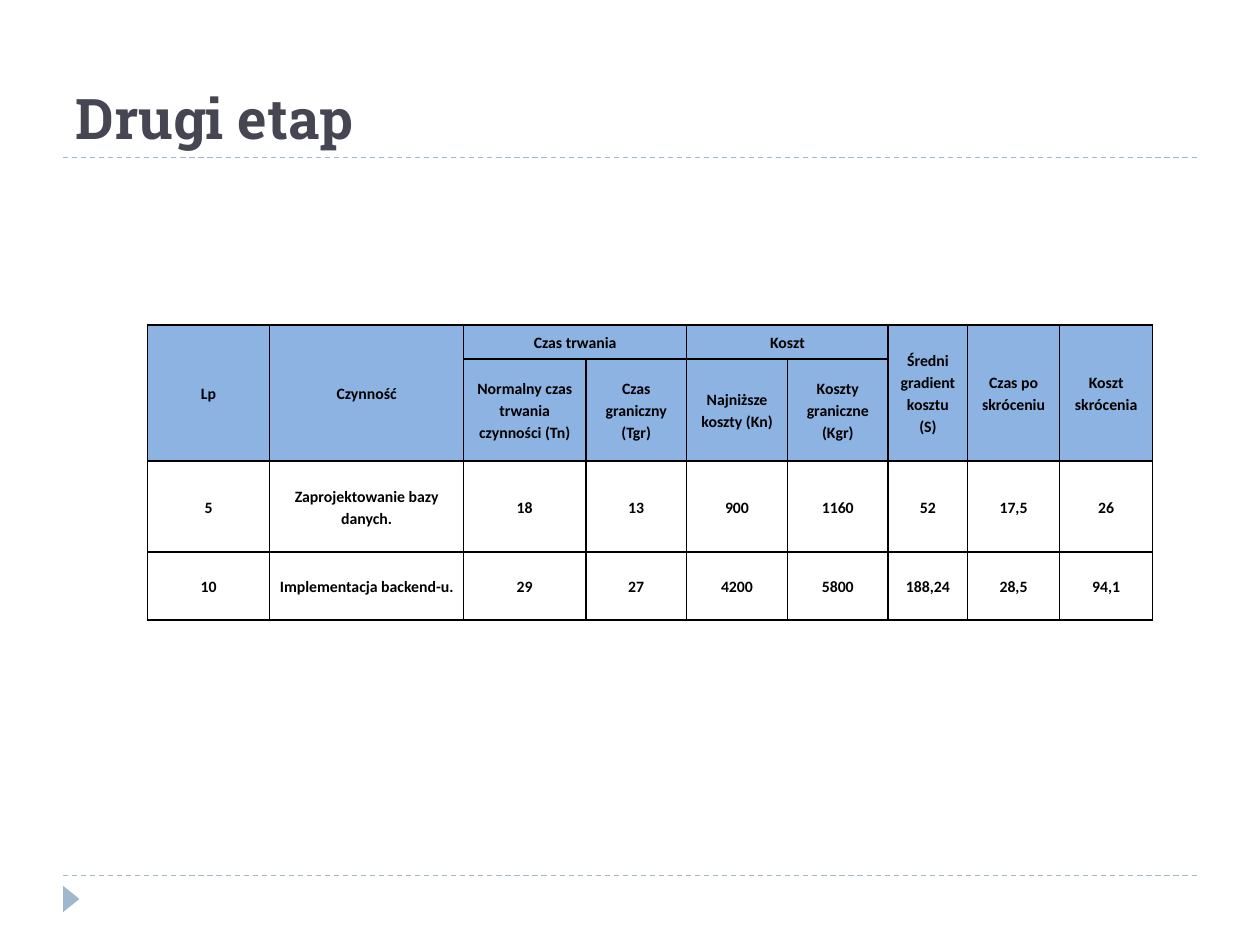
"""Build the "Drugi etap" slide with its table of shortened activities."""
from dataclasses import dataclass

import pptx
import pptx.dml.color
import pptx.enum.dml
import pptx.enum.shapes
import pptx.enum.text
import pptx.oxml
import pptx.oxml.ns
import pptx.util
from pptx.util import Inches, Pt

RGBColor = pptx.dml.color.RGBColor
ALIGN = pptx.enum.text.PP_ALIGN
ANCHOR = pptx.enum.text.MSO_ANCHOR

ACCENT = RGBColor(0x9F, 0xB8, 0xCD)
TITLE = RGBColor(0x46, 0x46, 0x53)
HEADER = RGBColor(0x8D, 0xB3, 0xE2)
BLACK = RGBColor(0, 0, 0)

COL_WIDTHS = (0.97, 1.54, 0.97, 0.8, 0.8, 0.8, 0.63, 0.73, 0.74)
ROW_HEIGHTS = (0.27, 0.81, 0.72, 0.54)
RULES = (6.95, 1.25)


@dataclass
class Header:
    text: str
    row: int
    col: int
    rows: int = 1
    cols: int = 1


HEADERS = (
    Header("Lp", 0, 0, rows=2),
    Header("Czynność", 0, 1, rows=2),
    Header("Czas trwania", 0, 2, cols=2),
    Header("Koszt", 0, 4, cols=2),
    Header("Średni gradient kosztu (S)", 0, 6, rows=2),
    Header("Czas po skróceniu", 0, 7, rows=2),
    Header("Koszt skrócenia", 0, 8, rows=2),
    Header("Normalny czas trwania czynności (Tn)", 1, 2),
    Header("Czas graniczny (Tgr)", 1, 3),
    Header("Najniższe koszty (Kn)", 1, 4),
    Header("Koszty graniczne (Kgr)", 1, 5),
)
ACTIVITIES = (
    ("5", "Zaprojektowanie bazy danych.", "18", "13", "900", "1160", "52", "17,5", "26"),
    ("10", "Implementacja backend-u.", "29", "27", "4200", "5800", "188,24", "28,5", "94,1"),
)


def add_rule(s, y: float) -> None:
    line = s.shapes.add_connector(
        pptx.enum.shapes.MSO_CONNECTOR.STRAIGHT, Inches(0.5), Inches(y), Inches(9.5), Inches(y))
    line.line.color.rgb = ACCENT
    line.line.width = Pt(0.75)
    line.line.dash_style = pptx.enum.dml.MSO_LINE.DASH
    line._element.spPr.append(pptx.oxml.parse_xml(
        f"<a:effectLst {pptx.oxml.ns.nsdecls('a')}/>"))


def add_marker(s) -> None:
    sp = s.shapes.add_shape(
        pptx.enum.shapes.MSO_SHAPE.ISOSCELES_TRIANGLE,
        Inches(0.46), Inches(7.07), Inches(0.21), Inches(0.13))
    sp.rotation = 90
    sp.shadow.inherit = False
    sp.fill.solid()
    sp.fill.fore_color.rgb = ACCENT
    sp.line.fill.background()


def set_title(s, text: str) -> None:
    title = s.shapes.title
    title.left, title.top = Inches(0.5), Inches(0.17)
    title.width, title.height = Inches(9), Inches(1.08)
    tf = title.text_frame
    tf.text = text
    tf.vertical_anchor = ANCHOR.BOTTOM
    p = tf.paragraphs[0]
    p.alignment = ALIGN.LEFT
    p.font.name, p.font.size, p.font.bold = "Roboto Slab", Pt(32), True
    p.font.color.rgb = TITLE


def style_cell(cell, filled: bool) -> None:
    tcPr = cell._tc.get_or_add_tcPr()
    for side in ("lnL", "lnR", "lnT", "lnB"):
        tcPr.append(pptx.oxml.parse_xml(
            f'<a:{side} {pptx.oxml.ns.nsdecls("a")} w="{Pt(1)}"><a:solidFill>'
            f'<a:srgbClr val="{BLACK}"/></a:solidFill></a:{side}>'))
    if filled:
        cell.fill.solid()
        cell.fill.fore_color.rgb = HEADER
    else:
        cell.fill.background()
    cell.margin_left = cell.margin_right = Inches(0.07)
    cell.margin_top = cell.margin_bottom = 0
    cell.vertical_anchor = ANCHOR.MIDDLE


def write_cell(cell, text: str) -> None:
    cell.text = text
    p = cell.text_frame.paragraphs[0]
    p.alignment = ALIGN.CENTER
    p.line_spacing = 1.15
    p.font.name, p.font.size, p.font.bold = "Calibri", Pt(9), True
    p.font.color.rgb = BLACK


def add_activity_table(s) -> None:
    table = s.shapes.add_table(
        len(ROW_HEIGHTS), len(COL_WIDTHS), Inches(1.17), Inches(2.58),
        Inches(sum(COL_WIDTHS)), Inches(sum(ROW_HEIGHTS))).table
    table.first_row = table.horz_banding = False
    for column, width in zip(table.columns, COL_WIDTHS):
        column.width = Inches(width)
    for i, (row, height) in enumerate(zip(table.rows, ROW_HEIGHTS)):
        row.height = Inches(height)
        for cell in row.cells:
            style_cell(cell, filled=i < 2)
    for h in HEADERS:
        cell = table.cell(h.row, h.col)
        if h.rows > 1 or h.cols > 1:
            cell.merge(table.cell(h.row + h.rows - 1, h.col + h.cols - 1))
        write_cell(cell, h.text)
    for i, activity in enumerate(ACTIVITIES, start=2):
        for j, text in enumerate(activity):
            write_cell(table.cell(i, j), text)


def main() -> None:
    prs = pptx.Presentation()
    prs.slide_width, prs.slide_height = Inches(10), Inches(7.5)
    s = prs.slides.add_slide(prs.slide_layouts[5])
    for y in RULES:
        add_rule(s, y)
    add_marker(s)
    set_title(s, "Drugi etap")
    add_activity_table(s)
    prs.save("out.pptx")


if __name__ == "__main__":
    main()
